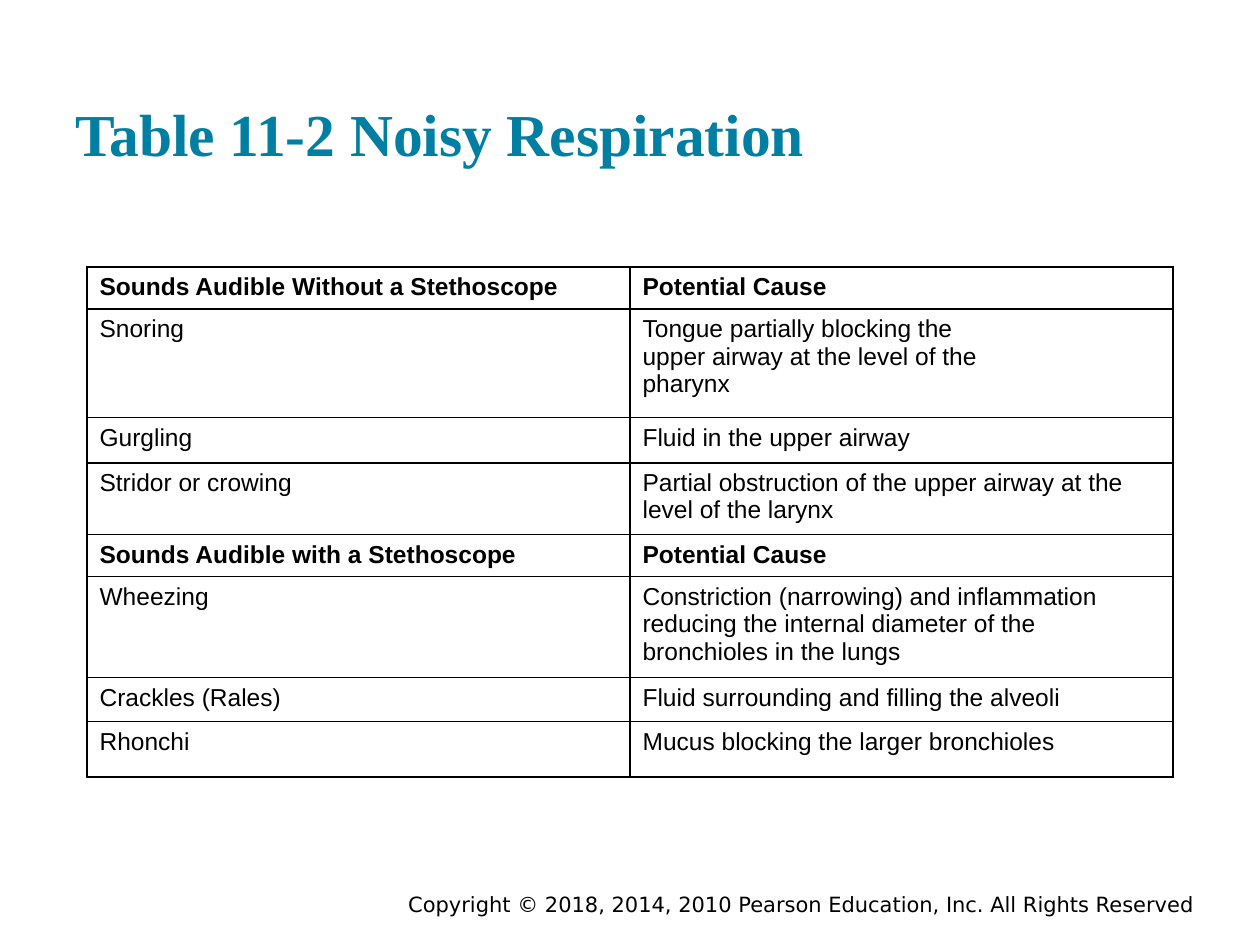
from pptx import Presentation
from pptx.dml.color import RGBColor
from pptx.enum.text import MSO_ANCHOR, PP_ALIGN
from pptx.oxml import parse_xml
from pptx.oxml.ns import nsdecls
from pptx.util import Inches, Pt

BLACK = RGBColor(0x00, 0x00, 0x00)
WHITE = RGBColor(0xFF, 0xFF, 0xFF)
TEAL = RGBColor(0x00, 0x7F, 0xA3)

ROWS = [
    (0.31, True, "Sounds Audible Without a Stethoscope", "Potential Cause"),
    (0.86, False, "Snoring",
     "Tongue partially blocking the\nupper airway at the level of the\npharynx"),
    (0.36, False, "Gurgling", "Fluid in the upper airway"),
    (0.57, False, "Stridor or crowing",
     "Partial obstruction of the upper airway at the level of the larynx"),
    (0.33, True, "Sounds Audible with a Stethoscope", "Potential Cause"),
    (0.76, False, "Wheezing",
     "Constriction (narrowing) and inflammation reducing the internal "
     "diameter of the bronchioles in the lungs"),
    (0.35, False, "Crackles (Rales)", "Fluid surrounding and filling the alveoli"),
    (0.44, False, "Rhonchi", "Mucus blocking the larger bronchioles"),
]


def write(frame, text, font="Arial", size=14, color=BLACK, bold=False,
          align=PP_ALIGN.LEFT):
    frame.word_wrap = True
    frame.text = text
    for para in frame.paragraphs:
        para.alignment = align
        for run in para.runs:
            run.font.name = font
            run.font.size = Pt(size)
            run.font.bold = bold
            run.font.color.rgb = color


def add_text(slide, box, text, anchor, inset, **style):
    frame = slide.shapes.add_textbox(*map(Inches, box)).text_frame
    frame.vertical_anchor = anchor
    frame.margin_top = frame.margin_bottom = Inches(inset)
    write(frame, text, **style)


def add_edges(cell):
    props = cell._tc.get_or_add_tcPr()
    for place, side in enumerate("LRTB"):
        props.insert(place, parse_xml(
            f'<a:ln{side} {nsdecls("a")} w="{Pt(1)}"><a:solidFill>'
            f'<a:srgbClr val="{BLACK}"/></a:solidFill></a:ln{side}>'))


def add_sounds(slide, box):
    table = slide.shapes.add_table(len(ROWS), 2, *map(Inches, box)).table
    for col in table.columns:
        col.width = Inches(box[2] / 2)
    for row, (height, bold, *texts) in zip(table.rows, ROWS):
        row.height = Inches(height)
        for cell, text in zip(row.cells, texts):
            cell.fill.solid()
            cell.fill.fore_color.rgb = WHITE
            write(cell.text_frame, text, bold=bold)
            add_edges(cell)


def main():
    deck = Presentation()
    deck.slide_width, deck.slide_height = Inches(10), Inches(7.5)
    slide = deck.slides.add_slide(deck.slide_layouts[6])
    add_text(slide, (2.92, 7.05, 6.66, 0.25),
             "Copyright © 2018, 2014, 2010 Pearson Education, Inc. "
             "All Rights Reserved",
             MSO_ANCHOR.MIDDLE, 0, font="DejaVu Sans", size=12,
             align=PP_ALIGN.RIGHT)
    add_text(slide, (0.5, 0.24, 9, 1.2), "Table 11-2 Noisy Respiration",
             MSO_ANCHOR.BOTTOM, 0.1, font="Times New Roman", size=34,
             color=TEAL, bold=True)
    add_sounds(slide, (0.69, 2.12, 8.62, 4.06))
    deck.save("out.pptx")


if __name__ == "__main__":
    main()
